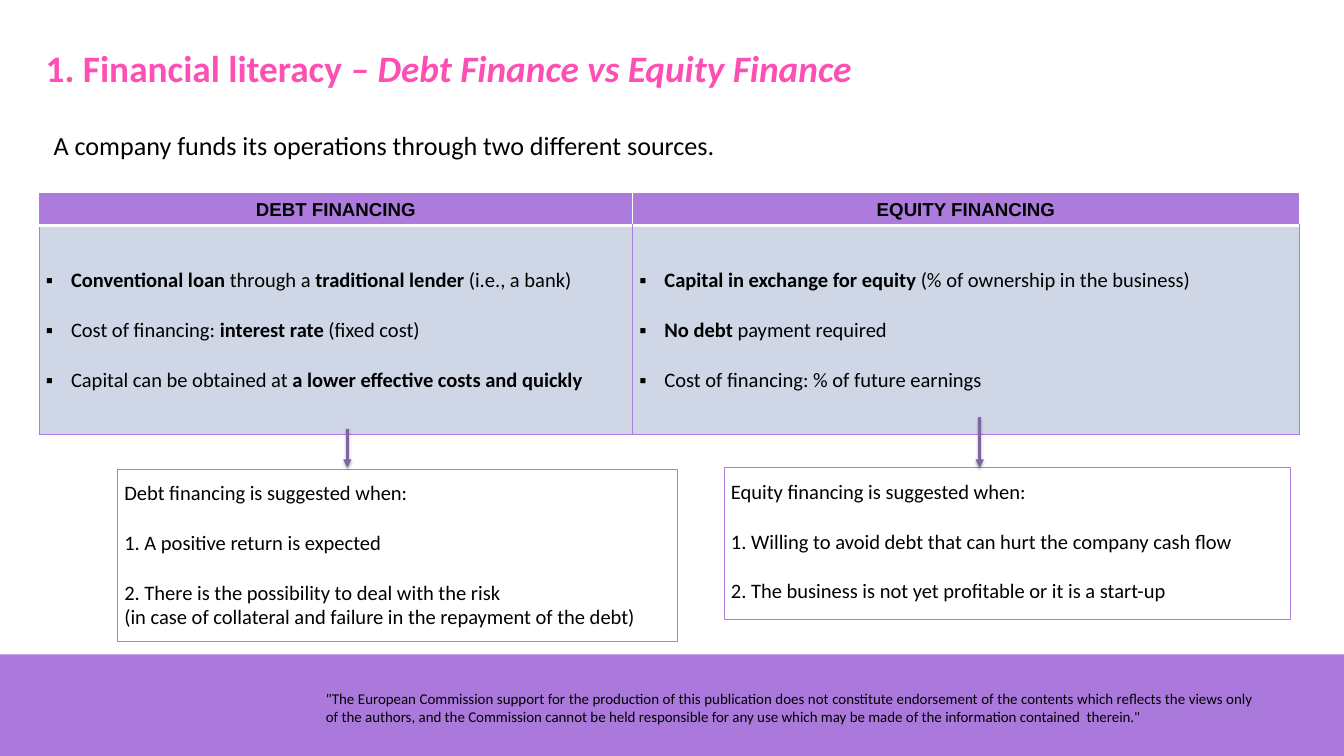
"""Build a slide that compares debt financing with equity financing."""
from dataclasses import dataclass
from typing import NamedTuple

from lxml.etree import SubElement
from pptx import Presentation
from pptx.dml.color import RGBColor
from pptx.enum.shapes import MSO_CONNECTOR, MSO_SHAPE
from pptx.enum.text import MSO_ANCHOR, PP_ALIGN
from pptx.oxml.ns import qn
from pptx.util import Cm, Pt

COLORS = {
    "band": "AB79DB",
    "accent": "AC7BDC",
    "cell": "CFD7E7",
    "arrow": "8064A2",
    "title": "FD4FB4",
    "text": "000000",
    "white": "FFFFFF",
}
LINE_GAP = 26.8


class Run(NamedTuple):
    text: str
    bold: bool = False
    italic: bool = False


class Border(NamedTuple):
    tag: str
    color: str
    points: float


class Arrow(NamedTuple):
    x: float
    top: float
    bottom: float


@dataclass
class Style:
    size: float
    font: str = "Calibri"
    color: str = "text"
    alignment: PP_ALIGN = PP_ALIGN.LEFT
    line_spacing: float = 1.0
    bullet: bool = False


@dataclass
class Paragraph:
    runs: list[Run]
    gap: float = LINE_GAP


@dataclass
class TextArea:
    left: float
    top: float
    width: float
    height: float
    paragraphs: list[Paragraph]
    style: Style
    margin_left: float = 0.25
    margin_top: float = 0.13
    outlined: bool = False


def rgb(name: str) -> RGBColor:
    return RGBColor.from_string(COLORS[name])


def set_attributes(target, values: dict) -> None:
    for name, value in values.items():
        setattr(target, name, value)


def plain(*texts: str) -> list[Paragraph]:
    return [Paragraph([Run(text)]) for text in texts]


def add_bullet(paragraph) -> None:
    properties = paragraph._p.get_or_add_pPr()
    properties.set("marL", str(Cm(0.95)))
    properties.set("indent", str(-Cm(0.95)))
    color = SubElement(properties, qn("a:buClr"))
    SubElement(color, qn("a:srgbClr"), val=COLORS["text"])
    SubElement(properties, qn("a:buFont"), typeface="Arial")
    SubElement(properties, qn("a:buChar"), char="▪")


def write_text(frame, paragraphs: list[Paragraph], style: Style) -> None:
    for index, content in enumerate(paragraphs):
        paragraph = frame.add_paragraph() if index else frame.paragraphs[0]
        if style.bullet:
            add_bullet(paragraph)
        set_attributes(paragraph, {
            "alignment": style.alignment,
            "line_spacing": style.line_spacing,
            "space_before": Pt(content.gap if index else 0),
        })
        for text, bold, italic in content.runs:
            run = paragraph.add_run()
            run.text = text
            set_attributes(run.font, {
                "name": style.font,
                "size": Pt(style.size),
                "bold": bold,
                "italic": italic,
            })
            run.font.color.rgb = rgb(style.color)


def add_text_area(slide, area: TextArea) -> None:
    position = [Cm(value) for value in (area.left, area.top, area.width, area.height)]
    if area.outlined:
        shape = slide.shapes.add_shape(MSO_SHAPE.RECTANGLE, *position)
        shape.shadow.inherit = False
        shape.fill.background()
        shape.line.color.rgb = rgb("accent")
        shape.line.width = Pt(0.75)
    else:
        shape = slide.shapes.add_textbox(*position)
    set_attributes(shape.text_frame, {
        "word_wrap": True,
        "vertical_anchor": MSO_ANCHOR.TOP,
        "margin_left": Cm(area.margin_left),
        "margin_right": Cm(0.25),
        "margin_top": Cm(area.margin_top),
        "margin_bottom": Cm(0.13),
    })
    write_text(shape.text_frame, area.paragraphs, area.style)


def add_band(slide) -> None:
    band = slide.shapes.add_shape(MSO_SHAPE.RECTANGLE, 0, Cm(24.74), Cm(50.8), Cm(3.84))
    band.shadow.inherit = False
    band.fill.solid()
    band.fill.fore_color.rgb = rgb("band")
    band.line.fill.background()


def format_cell(cell, fill: str, borders: list[Border]) -> None:
    cell.vertical_anchor = MSO_ANCHOR.MIDDLE
    properties = cell._tc.get_or_add_tcPr()
    for border in borders:
        line = SubElement(properties, qn(f"a:{border.tag}"), w=str(Pt(border.points)))
        SubElement(SubElement(line, qn("a:solidFill")), qn("a:srgbClr"), val=COLORS[border.color])
    cell.fill.solid()
    cell.fill.fore_color.rgb = rgb(fill)


def add_comparison(slide, columns: dict[str, list[Paragraph]]) -> None:
    table = slide.shapes.add_table(2, 2, Cm(1.48), Cm(7.31), Cm(47.63), Cm(9.12)).table
    table.horz_banding = False
    for column, width in zip(table.columns, (22.43, 25.2)):
        column.width = Cm(width)
    for row, height in zip(table.rows, (1.22, 7.9)):
        row.height = Cm(height)
    header_style = Style(20, "Arial", alignment=PP_ALIGN.CENTER)
    for index, (heading, points) in enumerate(columns.items()):
        header, body = table.cell(0, index), table.cell(1, index)
        format_cell(header, "accent", [
            Border("lnL", "white" if index else "accent", 1), Border("lnR", "white", 1),
            Border("lnT", "accent", 1), Border("lnB", "white", 3)])
        format_cell(body, "cell", [
            Border("lnL", "accent", 1), Border("lnR", "accent", 1),
            Border("lnT", "white", 3), Border("lnB", "accent", 1)])
        write_text(header.text_frame, [Paragraph([Run(heading, True)])], header_style)
        write_text(body.text_frame, points, Style(22, bullet=True))


def add_arrow(slide, arrow: Arrow) -> None:
    connector = slide.shapes.add_connector(
        MSO_CONNECTOR.STRAIGHT, Cm(arrow.x), Cm(arrow.top), Cm(arrow.x), Cm(arrow.bottom))
    connector.line.color.rgb = rgb("arrow")
    connector.line.width = Pt(3)
    SubElement(connector.line._get_or_add_ln(), qn("a:tailEnd"), type="triangle")
    effects = SubElement(connector._element.spPr, qn("a:effectLst"))
    shadow = SubElement(effects, qn("a:outerShdw"), blurRad=str(Pt(3.1)),
                        dist=str(Pt(1.8)), dir="5400000", rotWithShape="0")
    color = SubElement(shadow, qn("a:srgbClr"), val=COLORS["text"])
    SubElement(color, qn("a:alpha"), val="35000")


TITLE = [Paragraph([Run("1. Financial literacy ", True),
                    Run("– Debt Finance vs Equity Finance", True, True)])]
DISCLAIMER = plain(
    '"The European Commission support for the production of this publication does not constitute '
    'endorsement of the contents which reflects the views only of the authors, and the Commission '
    'cannot be held responsible for any use which may be made of the information contained  therein."')
COMPARISON = {
    "DEBT FINANCING": [
        Paragraph([Run("Conventional loan ", True), Run("through a "),
                   Run("traditional lender", True), Run(" (i.e., a bank)")]),
        Paragraph([Run("Cost of financing: "), Run("interest rate ", True), Run("(fixed cost)")]),
        Paragraph([Run("Capital can be obtained at "),
                   Run("a lower effective costs and quickly", True)]),
    ],
    "EQUITY FINANCING": [
        Paragraph([Run("Capital in exchange for equity ", True),
                   Run("(% of ownership in the business)")]),
        Paragraph([Run("No debt", True), Run(" payment required")]),
        Paragraph([Run("Cost of financing: % of future earnings")]),
    ],
}
DEBT_ADVICE = plain("Debt financing is suggested when:", "1. A positive return is expected",
                    "2. There is the possibility to deal with the risk") + [
    Paragraph([Run("(in case of collateral and failure in the repayment of the debt)")], 0)]
EQUITY_ADVICE = plain("Equity financing is suggested when:",
                      "1. Willing to avoid debt that can hurt the company cash flow",
                      "2. The business is not yet profitable or it is a start-up")
INTRO = plain("A company funds its operations through two different sources.")
TEXT_AREAS = [
    TextArea(12.07, 25.93, 35.56, 1.4, DISCLAIMER,
             Style(16, alignment=PP_ALIGN.JUSTIFY, line_spacing=1.01)),
    TextArea(1.48, 1.57, 34.72, 1.96, TITLE, Style(40, color="title")),
    TextArea(1.55, 4.78, 38.89, 1.6, INTRO, Style(28, alignment=PP_ALIGN.JUSTIFY), 0.48),
    TextArea(4.45, 17.73, 21.16, 6.5, DEBT_ADVICE, Style(22), margin_top=0.43, outlined=True),
    TextArea(27.38, 17.68, 21.39, 5.72, EQUITY_ADVICE, Style(22), margin_top=0.43, outlined=True),
]
ARROWS = [Arrow(13.13, 16.2, 17.68), Arrow(37.03, 15.77, 17.68)]


def main() -> None:
    presentation = Presentation()
    set_attributes(presentation, {"slide_width": Cm(50.8), "slide_height": Cm(28.58)})
    slide = presentation.slides.add_slide(presentation.slide_layouts[6])
    add_band(slide)
    add_comparison(slide, COMPARISON)
    for area in TEXT_AREAS:
        add_text_area(slide, area)
    for arrow in ARROWS:
        add_arrow(slide, arrow)
    presentation.save("out.pptx")


if __name__ == "__main__":
    main()
